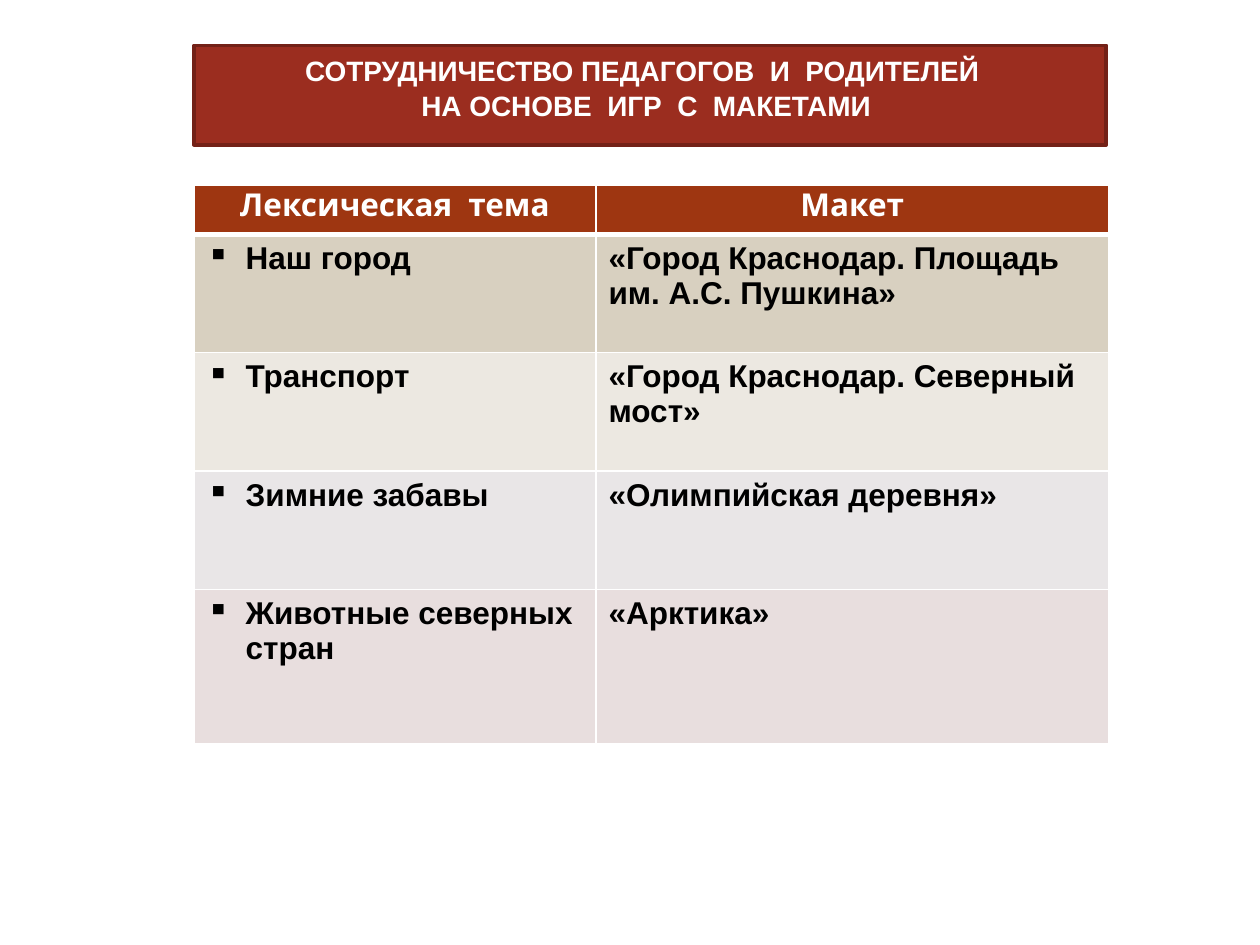
"""Build a slide with a title banner and a table of lexical themes and models."""
from dataclasses import dataclass

import pptx
import pptx.dml.color
import pptx.enum.shapes
import pptx.enum.text
import pptx.oxml
import pptx.oxml.ns
import pptx.util

Inches = pptx.util.Inches
Pt = pptx.util.Pt
CENTER = pptx.enum.text.PP_ALIGN.CENTER
LEFT = pptx.enum.text.PP_ALIGN.LEFT
WHITE = "FFFFFF"
BLACK = "000000"
HEADER_FILL = "9E3611"
TITLE_LINES = ("СОТРУДНИЧЕСТВО ПЕДАГОГОВ  И  РОДИТЕЛЕЙ  ", "НА ОСНОВЕ  ИГР  С  МАКЕТАМИ ")
HEADINGS = ("Лексическая  тема", "Макет")
COLUMN_WIDTHS = (3.19, 4.07)
HEADER_HEIGHT = 0.39


@dataclass
class ThemeRow:
    theme: str
    model: str
    fill: str
    height: float = 0.94


THEME_ROWS = (
    ThemeRow("Наш город", "«Город Краснодар. Площадь им. А.С. Пушкина»", "D8D0C0"),
    ThemeRow("Транспорт", "«Город Краснодар. Северный мост»", "ECE8E1"),
    ThemeRow("Зимние забавы", "«Олимпийская деревня»", "E9E6E7"),
    ThemeRow("Животные северных стран", "«Арктика»", "E8DEDE", 1.22),
)


def color(value: str) -> pptx.dml.color.RGBColor:
    return pptx.dml.color.RGBColor.from_string(value)


def write(paragraph, text: str, font: str, size: int, text_color: str, alignment) -> None:
    paragraph.text = text
    paragraph.alignment = alignment
    paragraph.font.name = font
    paragraph.font.size = Pt(size)
    paragraph.font.bold = True
    paragraph.font.color.rgb = color(text_color)


def add_bullet(paragraph) -> None:
    properties = paragraph._p.get_or_add_pPr()
    properties.set("marL", str(Inches(0.31)))
    properties.set("indent", str(Inches(-0.31)))
    namespace = pptx.oxml.ns.nsdecls("a")
    bullet = pptx.oxml.parse_xml(f'<a:buChar {namespace} char="▪"/>')
    properties.insert_element_before(bullet, "a:tabLst", "a:defRPr", "a:extLst")


def set_borders(cell, top: int, bottom: int) -> None:
    properties = cell._tc.get_or_add_tcPr()
    widths = {"lnL": 1, "lnR": 1, "lnT": top, "lnB": bottom}
    for position, (side, width) in enumerate(widths.items()):
        border = pptx.oxml.parse_xml(
            f'<a:{side} {pptx.oxml.ns.nsdecls("a")} w="{Pt(width)}">'
            f'<a:solidFill><a:srgbClr val="{WHITE}"/></a:solidFill></a:{side}>'
        )
        properties.insert(position, border)


def fill_cell(cell, fill: str, top: int, bottom: int) -> None:
    cell.fill.solid()
    cell.fill.fore_color.rgb = color(fill)
    set_borders(cell, top, bottom)


def add_title(slide) -> None:
    shape = slide.shapes.add_shape(
        pptx.enum.shapes.MSO_SHAPE.RECTANGLE,
        Inches(1.54), Inches(0.36), Inches(7.24), Inches(0.79),
    )
    shape.shadow.inherit = False
    shape.fill.solid()
    shape.fill.fore_color.rgb = color("9B2D1F")
    shape.line.color.rgb = color("732117")
    shape.line.width = Pt(2)
    frame = shape.text_frame
    frame.word_wrap = True
    frame.vertical_anchor = pptx.enum.text.MSO_ANCHOR.TOP
    for index, line in enumerate(TITLE_LINES):
        paragraph = frame.add_paragraph() if index else frame.paragraphs[0]
        write(paragraph, line, "Arial", 16, WHITE, CENTER)
        paragraph.line_spacing = 1.05


def add_theme_table(slide) -> None:
    heights = [HEADER_HEIGHT] + [row.height for row in THEME_ROWS]
    table = slide.shapes.add_table(
        len(heights), len(COLUMN_WIDTHS), Inches(1.54), Inches(1.47),
        Inches(sum(COLUMN_WIDTHS)), Inches(sum(heights)),
    ).table
    for column, width in zip(table.columns, COLUMN_WIDTHS):
        column.width = Inches(width)
    for table_row, height in zip(table.rows, heights):
        table_row.height = Inches(height)
    for cell, heading in zip(table.rows[0].cells, HEADINGS):
        cell.margin_top = cell.margin_bottom = Inches(0.02)
        write(cell.text_frame.paragraphs[0], heading, "Karla", 18, WHITE, CENTER)
        fill_cell(cell, HEADER_FILL, 1, 3)
    for index, row in enumerate(THEME_ROWS, start=1):
        for cell, text in zip(table.rows[index].cells, (row.theme, row.model)):
            write(cell.text_frame.paragraphs[0], text, "Arial", 18, BLACK, LEFT)
            fill_cell(cell, row.fill, 3 if index == 1 else 1, 1)
        add_bullet(table.cell(index, 0).text_frame.paragraphs[0])


def main() -> None:
    presentation = pptx.Presentation()
    presentation.slide_width = Inches(10)
    presentation.slide_height = Inches(7.5)
    slide = presentation.slides.add_slide(presentation.slide_layouts[6])
    add_title(slide)
    add_theme_table(slide)
    presentation.save("out.pptx")


if __name__ == "__main__":
    main()
